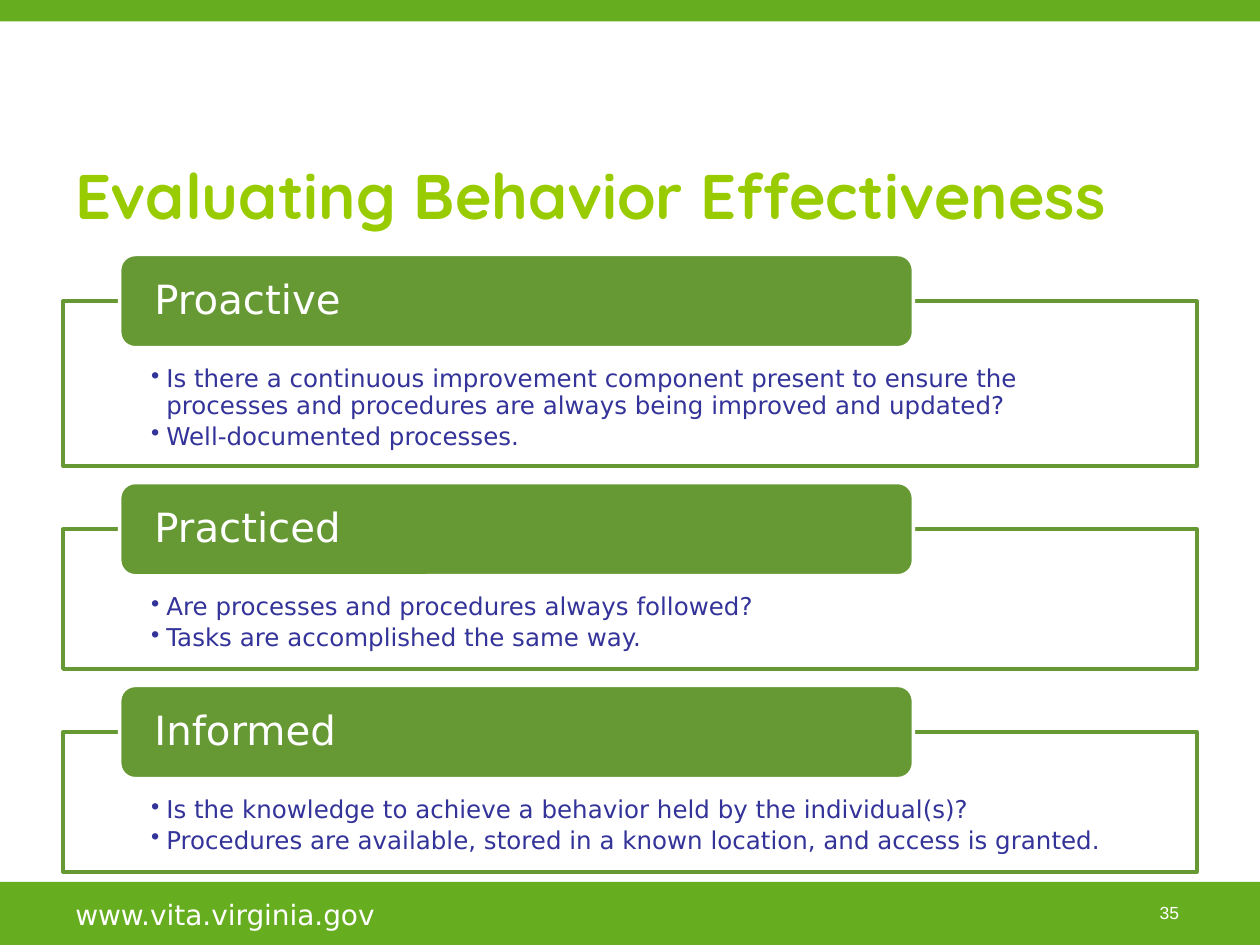
from dataclasses import dataclass

from lxml import etree
from pptx import Presentation
from pptx.dml.color import RGBColor
from pptx.enum.shapes import MSO_SHAPE as Shape
from pptx.enum.text import MSO_ANCHOR as Anchor, PP_ALIGN as Align
from pptx.oxml.ns import qn
from pptx.util import Emu, Pt

EMU_PER_PX = 9144  # 100 px to the inch


def px(length):
    return Emu(length * EMU_PER_PX)


@dataclass(frozen=True)
class Theme:
    bar: str = "66AE20"
    title: str = "99CC00"
    heading: str = "669933"
    body: str = "333399"
    white: str = "FFFFFF"
    title_font: str = "Quicksand"
    text_font: str = "DejaVu Sans"
    number_font: str = "Arial"
    title_size: int = 36
    heading_size: int = 23
    footer_size: int = 16
    body_size: int = 14
    number_size: int = 10
    line_width: int = 2


class SlideBuilder:
    def __init__(self, page, theme):
        self.page = page
        self.theme = theme

    def style(self, para, font, size, color, bold=False):
        for span in para.runs:
            span.font.name = font
            span.font.size = Pt(size)
            span.font.bold = bold
            span.font.color.rgb = RGBColor.from_string(color)

    def frame(self, box, insets, anchor):
        """Set wrapping, anchor and the left, top, right and bottom insets."""
        frame = box.text_frame
        frame.word_wrap = True
        frame.vertical_anchor = anchor
        (frame.margin_left, frame.margin_top,
         frame.margin_right, frame.margin_bottom) = map(px, insets)
        return frame

    def shape(self, kind, bounds, fill, line=None):
        shape = self.page.shapes.add_shape(kind, *map(px, bounds))
        shape.shadow.inherit = False
        shape.fill.solid()
        shape.fill.fore_color.rgb = RGBColor.from_string(fill)
        if line:
            shape.line.color.rgb = RGBColor.from_string(line)
            shape.line.width = Pt(self.theme.line_width)
        else:
            shape.line.fill.background()
        return shape

    def bar(self, top, height):
        self.shape(Shape.RECTANGLE, (0, top, 1000, height), self.theme.bar)

    def title(self, text, bounds):
        box = self.page.shapes.title
        box.left, box.top, box.width, box.height = map(px, bounds)
        frame = self.frame(box, (10, 5, 10, 5), Anchor.MIDDLE)
        frame.text = text
        para = frame.paragraphs[0]
        para.alignment = Align.LEFT
        theme = self.theme
        self.style(para, theme.title_font, theme.title_size, theme.title, bold=True)

    def label(self, text, bounds, font, size, insets, anchor, align):
        box = self.page.shapes.add_textbox(*map(px, bounds))
        frame = self.frame(box, insets, anchor)
        frame.text = text
        para = frame.paragraphs[0]
        para.alignment = align
        self.style(para, font, size, self.theme.white)

    def panel(self, bounds, bullets):
        theme = self.theme
        box = self.shape(Shape.RECTANGLE, bounds, theme.white, theme.heading)
        frame = self.frame(box, (70, 52, 70, 11), Anchor.TOP)
        frame.text = "\n".join(bullets)
        for para in frame.paragraphs:
            props = para._p.get_or_add_pPr()
            props.set("marL", str(px(12)))
            props.set("indent", str(px(-12)))
            etree.SubElement(props, qn("a:buChar")).set("char", "•")
            para.alignment = Align.LEFT
            para.line_spacing = 0.9
            para.space_after = Pt(2.5)
            self.style(para, theme.text_font, theme.body_size, theme.body)

    def heading(self, text, bounds):
        theme = self.theme
        box = self.shape(Shape.ROUNDED_RECTANGLE, bounds, theme.heading, theme.white)
        frame = self.frame(box, (24, 0, 24, 0), Anchor.MIDDLE)
        frame.text = text
        para = frame.paragraphs[0]
        para.alignment = Align.LEFT
        para.line_spacing = 0.9
        self.style(para, theme.text_font, theme.heading_size, theme.white)


SECTIONS = [
    ("Proactive", 131, [
        "Is there a continuous improvement component present to ensure the "
        "processes and procedures are always being improved and updated?",
        "Well-documented processes.",
    ]),
    ("Practiced", 111, [
        "Are processes and procedures always followed?",
        "Tasks are accomplished the same way.",
    ]),
    ("Informed", 111, [
        "Is the knowledge to achieve a behavior held by the individual(s)?",
        "Procedures are available, stored in a known location, and access is granted.",
    ]),
]


def main():
    deck = Presentation()
    deck.slide_width, deck.slide_height = px(1000), px(750)
    theme = Theme()
    title_only = deck.slide_layouts[5]
    builder = SlideBuilder(deck.slides.add_slide(title_only), theme)

    builder.bar(700, 50)
    builder.bar(0, 17)
    builder.label("35", (917, 715, 22, 19), theme.number_font, theme.number_size,
                  (0, 0, 0, 0), Anchor.MIDDLE, Align.CENTER)
    builder.title("Evaluating Behavior Effectiveness", (50, 108, 900, 92))

    panel_top, panel_gap, heading_rise = 239, 50, 37
    for name, height, bullets in SECTIONS:
        builder.panel((50, panel_top, 900, height), bullets)
        builder.heading(name, (95, panel_top - heading_rise, 630, 2 * heading_rise))
        panel_top += height + panel_gap

    builder.label("www.vita.virginia.gov", (50, 707, 267, 35), theme.text_font,
                  theme.footer_size, (10, 5, 10, 5), Anchor.TOP, Align.LEFT)
    deck.save("out.pptx")


if __name__ == "__main__":
    main()
